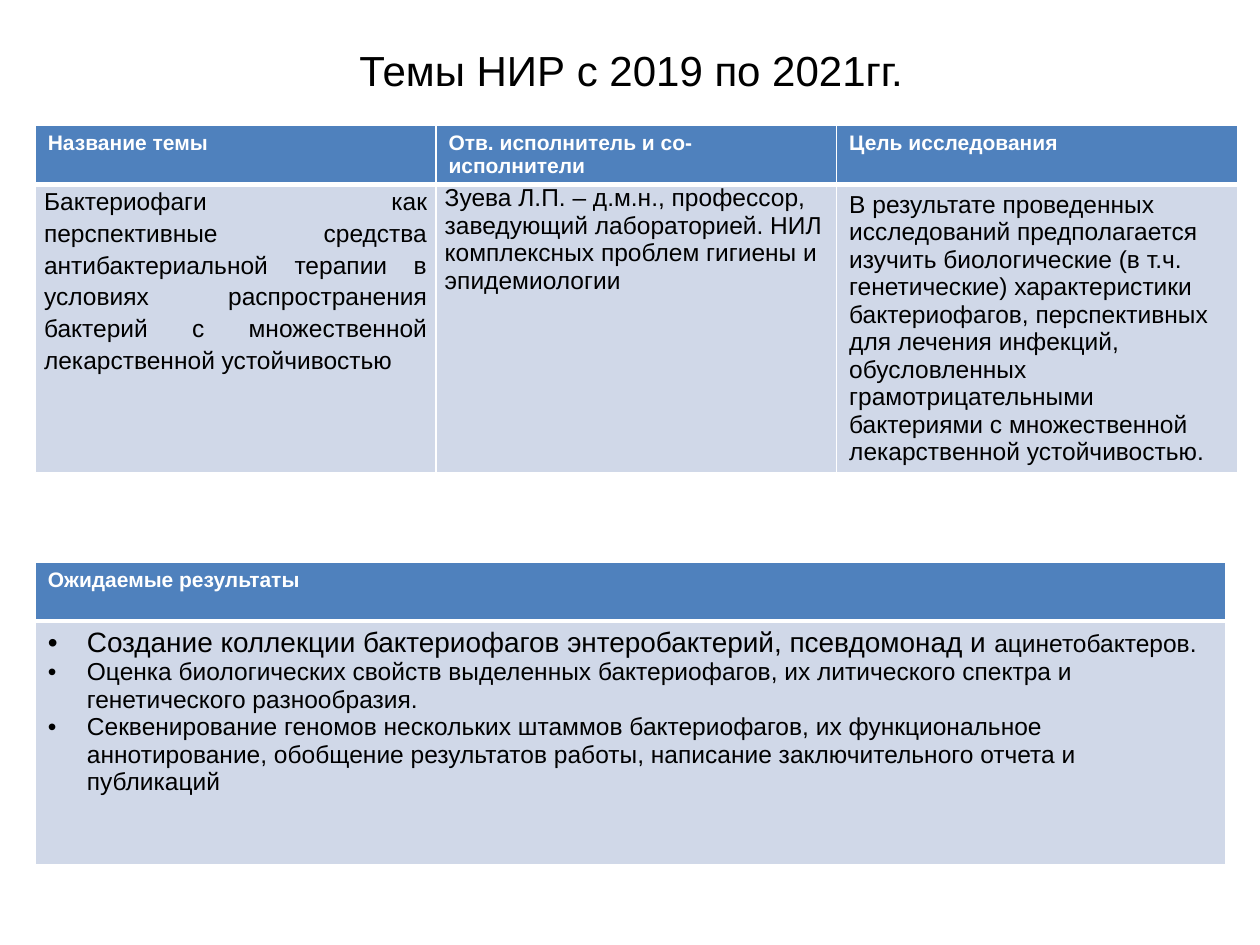
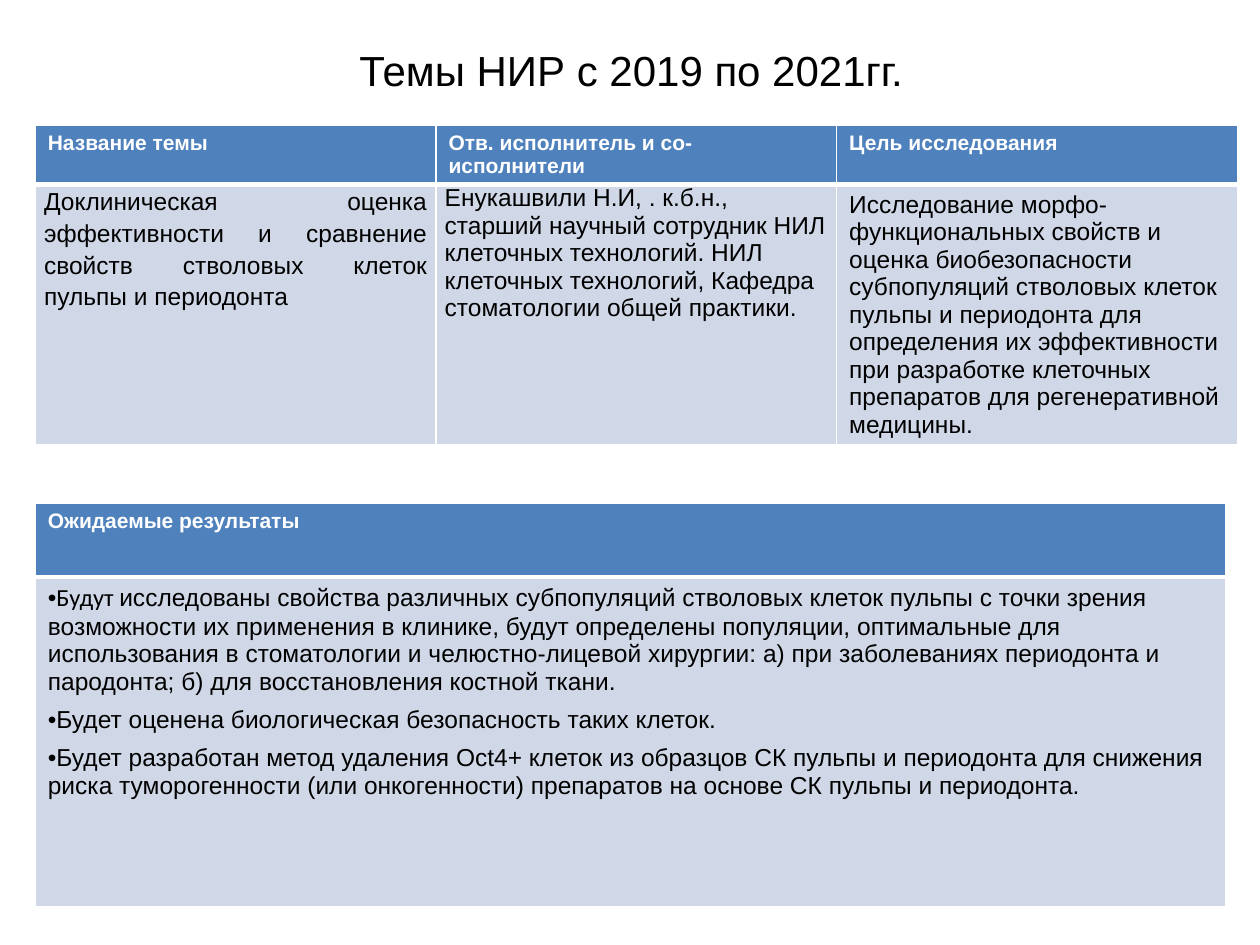
import pptx
import pptx.util
import pptx.dml.color
import pptx.enum.text
import lxml.etree
import pptx.oxml.ns

Inches = pptx.util.Inches
Pt = pptx.util.Pt
Align = pptx.enum.text.PP_ALIGN
COLORS = {"header": "4F81BD", "body": "D0D8E8", "light": "FFFFFF", "dark": "000000"}
LEFT = 0.28
TOPIC_TOP = 0.99
COLUMN = 3.18
RESULTS_WIDTH = 9.45
BULLET_INDENT = 0.31
HEADINGS = ["Название темы", "Отв. исполнитель и со- исполнители", "Цель исследования"]

TOPICS = [
    {
        "cells": [
            "Бактериофаги как перспективные средства антибактериальной терапии в условиях распространения бактерий с множественной лекарственной устойчивостью",
            "Зуева Л.П. – д.м.н., профессор, заведующий лабораторией. НИЛ комплексных проблем гигиены и эпидемиологии",
            "В результате проведенных исследований предполагается изучить биологические (в т.ч. генетические) характеристики бактериофагов, перспективных для лечения инфекций, обусловленных грамотрицательными бактериями с множественной лекарственной устойчивостью.",
        ],
        "rows": [0.47, 2.28],
        "results": [
            [("Создание коллекции бактериофагов энтеробактерий, псевдомонад и ", 16, "Arial"), ("ацинетобактеров.", 14, "Arial")],
            [("Оценка биологических свойств выделенных бактериофагов, их литического спектра и генетического разнообразия.", 14, "Arial")],
            [("Секвенирование геномов нескольких штаммов бактериофагов, их функциональное аннотирование, обобщение результатов работы, написание заключительного отчета и публикаций", 14, "Arial")],
        ],
        "results_top": 4.46,
        "results_rows": [0.47, 1.93],
        "text_left": BULLET_INDENT,
        "space_before": 0,
    },
    {
        "cells": [
            "Доклиническая оценка эффективности и сравнение свойств стволовых клеток пульпы и периодонта",
            "Енукашвили Н.И, . к.б.н., старший научный сотрудник НИЛ клеточных технологий. НИЛ клеточных технологий, Кафедра стоматологии общей практики.",
            "Исследование морфо-функциональных свойств и оценка биобезопасности субпопуляций стволовых клеток пульпы и периодонта для определения их эффективности при разработке клеточных препаратов для регенеративной медицины.",
        ],
        "rows": [0.47, 2.06],
        "results": [
            [("Будут ", 14, "Calibri"), ("исследованы свойства различных субпопуляций стволовых клеток пульпы с точки зрения возможности их применения в клинике, будут определены популяции, оптимальные для использования в стоматологии и челюстно-лицевой хирургии: а) при заболеваниях периодонта и пародонта; б) для восстановления костной ткани.", 14, "Arial")],
            [("Будет оценена биологическая безопасность таких клеток.", 14, "Arial")],
            [("Будет разработан метод удаления Oct4+ клеток из образцов СК пульпы и периодонта для снижения риска туморогенности (или онкогенности) препаратов на основе СК пульпы и периодонта.", 14, "Arial")],
        ],
        "results_top": 3.99,
        "results_rows": [0.59, 2.62],
        "text_left": 0,
        "space_before": 6,
    },
]


def format_span(span, size, color, bold=False, name="Arial"):
    span.font.size = Pt(size)
    span.font.name = name
    span.font.bold = bold
    span.font.color.rgb = pptx.dml.color.RGBColor.from_string(COLORS[color])


def add_grid(page, top, widths, heights, headings):
    frame = page.shapes.add_table(2, len(widths), Inches(LEFT), Inches(top), Inches(sum(widths)), Inches(sum(heights)))
    table = frame.table
    for column, width in zip(table.columns, widths):
        column.width = Inches(width)
    for row, height in zip(table.rows, heights):
        row.height = Inches(height)
    for row_index, fill in enumerate(["header", "body"]):
        for cell in table.rows[row_index].cells:
            properties = cell._tc.get_or_add_tcPr()
            for side in ["L", "R", "T", "B"]:
                thick = (fill, side) in [("header", "B"), ("body", "T")]
                line = lxml.etree.SubElement(properties, pptx.oxml.ns.qn("a:ln" + side), w=str(Pt(3 if thick else 1)))
                solid = lxml.etree.SubElement(line, pptx.oxml.ns.qn("a:solidFill"))
                lxml.etree.SubElement(solid, pptx.oxml.ns.qn("a:srgbClr"), val=COLORS["light"])
            cell.fill.solid()
            cell.fill.fore_color.rgb = pptx.dml.color.RGBColor.from_string(COLORS[fill])
    for cell, heading in zip(table.rows[0].cells, headings):
        cell.text_frame.text = heading
        format_span(cell.text_frame.paragraphs[0].runs[0], 12, "light", True)
    return table


deck = pptx.Presentation()
deck.slide_width = Inches(10)
deck.slide_height = Inches(7.5)

for topic in TOPICS:
    page = deck.slides.add_slide(deck.slide_layouts[5])
    title = page.shapes.title
    title.left, title.top, title.width, title.height = [Inches(value) for value in (0.51, 0.13, 9, 0.85)]
    title.text_frame.text = "Темы НИР с 2019 по 2021гг."
    title.text_frame.vertical_anchor = pptx.enum.text.MSO_ANCHOR.MIDDLE
    title.text_frame.paragraphs[0].alignment = Align.CENTER
    format_span(title.text_frame.paragraphs[0].runs[0], 24, "dark")

    table = add_grid(page, TOPIC_TOP, [COLUMN] * 3, topic["rows"], HEADINGS)
    for index, text in enumerate(topic["cells"]):
        cell = table.cell(1, index)
        cell.text_frame.text = text
        para = cell.text_frame.paragraphs[0]
        format_span(para.runs[0], 14, "dark")
        if index < 2:
            cell.margin_left = cell.margin_right = Inches(0.07)
            cell.margin_top = cell.margin_bottom = 0
        if index == 0:
            para.alignment = Align.JUSTIFY
            para.line_spacing = 1.15

    table = add_grid(page, topic["results_top"], [RESULTS_WIDTH], topic["results_rows"], ["Ожидаемые результаты"])
    text_frame = table.cell(1, 0).text_frame
    for index, result in enumerate(topic["results"]):
        para = text_frame.add_paragraph() if index else text_frame.paragraphs[0]
        para.space_before = Pt(topic["space_before"])
        properties = para._p.get_or_add_pPr()
        properties.set("marL", str(Inches(topic["text_left"])))
        properties.set("indent", str(-Inches(BULLET_INDENT)))
        lxml.etree.SubElement(properties, pptx.oxml.ns.qn("a:buFont"), typeface="Arial")
        lxml.etree.SubElement(properties, pptx.oxml.ns.qn("a:buChar"), char="•")
        for text, size, name in result:
            span = para.add_run()
            span.text = text
            format_span(span, size, "dark", name=name)

deck.save("out.pptx")
